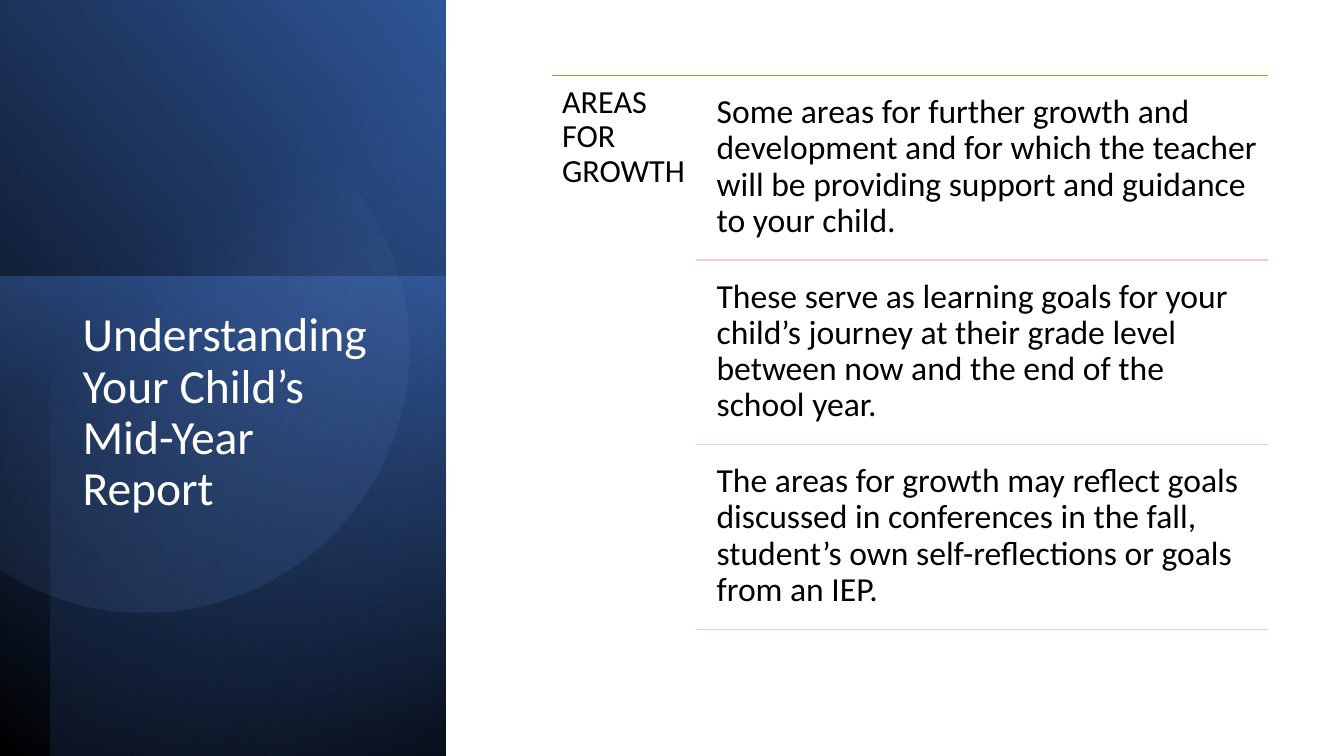
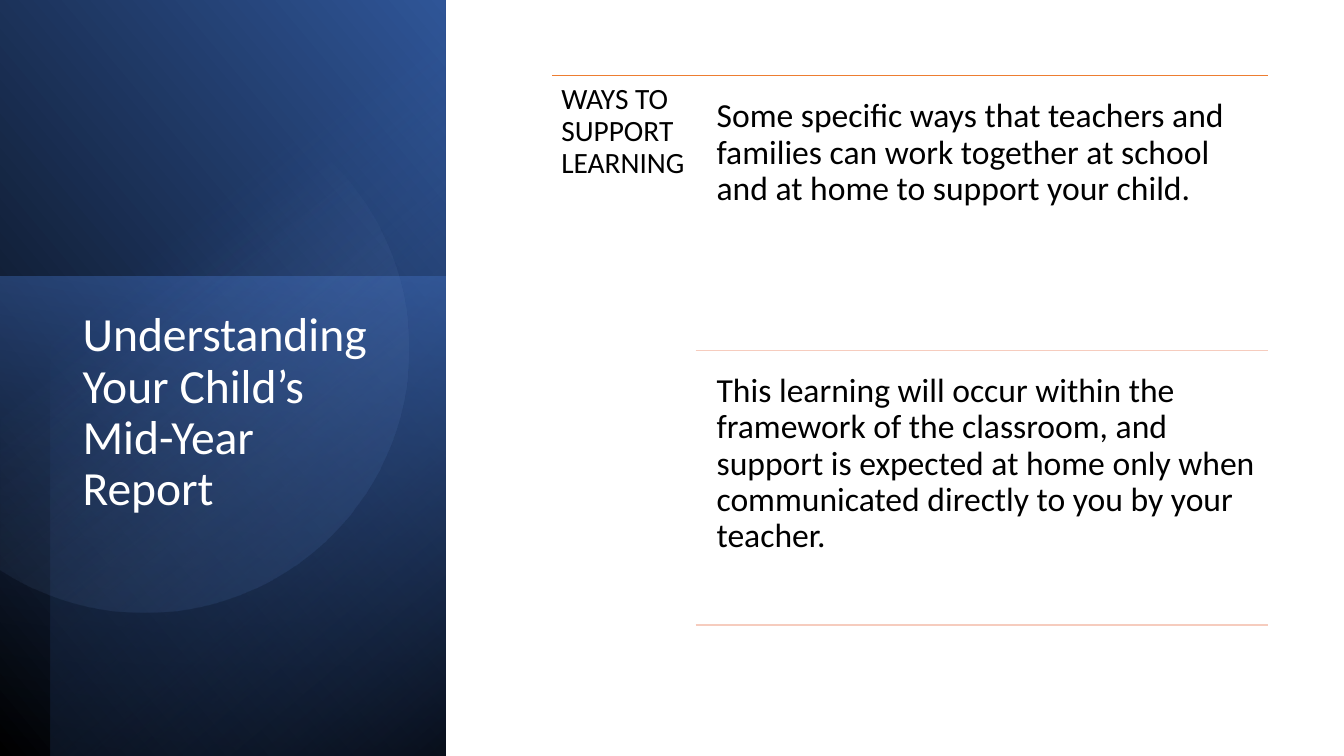
import math
from dataclasses import dataclass

import pptx
import pptx.dml.color
import pptx.enum.shapes
import pptx.enum.text
import pptx.oxml.ns
import pptx.oxml.xmlchemy
import pptx.presentation
import pptx.shapes.autoshape
import pptx.slide
import pptx.text.text
import pptx.util

Pt = pptx.util.Pt
qn = pptx.oxml.ns.qn
make = pptx.oxml.xmlchemy.OxmlElement


@dataclass(frozen=True)
class Theme:
    font: str = "Calibri"
    white: str = "FFFFFF"
    black: str = "000000"
    navy: str = "203864"
    deep: str = "2F5597"
    blue: str = "4472C4"
    pale: str = "8FAADC"
    rule: str = "ED7D31"
    faint: str = "F6CCBE"
    head: int = 34
    body: int = 24


@dataclass(frozen=True)
class Box:
    left: float
    top: float
    width: float
    height: float

    def spans(self) -> tuple[int, int, int, int]:
        return Pt(self.left), Pt(self.top), Pt(self.width), Pt(self.height)


@dataclass(frozen=True)
class Stop:
    place: float
    color: str
    alpha: int = 100


@dataclass(frozen=True)
class Panel:
    box: Box
    turn: int
    flip: bool
    angle: int
    stops: tuple[Stop, Stop]


@dataclass(frozen=True)
class Page:
    label: str
    size: int
    items: tuple[str, ...]


THEME = Theme()
TITLE = "Understanding Your Child’s Mid-Year Report"
TITLE_BOX = Box(51.8, 218.2, 226.8, 241.9)
LIST_BOX = Box(394.6, 54, 511.2, 401.8)
LABEL_WIDTH = 102.24
TEXT_LEFT = 504.7
GAP = 0.05

PANELS = (
    Panel(Box(-111.6, 111.6, 541.4, 318.2), 90, True, 310,
          (Stop(0, THEME.black), Stop(1, THEME.deep))),
    Panel(Box(-12.2, 209.5, 342.7, 318.2), 270, False, 190,
          (Stop(0, THEME.blue, 50), Stop(1, THEME.navy, 0))),
    Panel(Box(-92.9, 128.9, 540, 282.2), 270, True, 220,
          (Stop(0, THEME.black, 59), Stop(0.69, THEME.blue, 0))),
)
DISC_X, DISC_Y, DISC_R = 103, 249, 188.5
DISC_ARC = 123
DISC_ANGLE = 52
DISC_STOPS = (Stop(0.39, THEME.pale, 0), Stop(1, THEME.deep, 26))

PAGES = (
    Page("AREAS FOR GROWTH", 23, (
        "Some areas for further growth and development and for which the teacher "
        "will be providing support and guidance to your child.",
        "These serve as learning goals for your child’s journey at their grade level "
        "between now and the end of the school year.",
        "The areas for growth may reflect goals discussed in conferences in the fall, "
        "student’s own self-reflections or goals from an IEP.",
    )),
    Page("WAYS TO SUPPORT LEARNING", 21, (
        "Some specific ways that teachers and families can work together at school "
        "and at home to support your child.",
        "This learning will occur within the framework of the classroom, and support "
        "is expected at home only when communicated directly to you by your teacher.",
    )),
)


def rgb(color: str) -> pptx.dml.color.RGBColor:
    return pptx.dml.color.RGBColor.from_string(color)


def shade(shape: pptx.shapes.autoshape.Shape, angle: int,
          stops: tuple[Stop, Stop]) -> None:
    shape.shadow.inherit = False
    shape.line.fill.background()
    shape.fill.gradient()
    shape.fill.gradient_angle = 360 - angle
    for mark, stop in zip(shape.fill.gradient_stops, stops):
        mark.position = stop.place
        mark.color.rgb = rgb(stop.color)
    tones = shape.element.spPr.iter(qn("a:srgbClr"))
    for tone, stop in zip(list(tones), stops):
        if stop.alpha < 100:
            alpha = make("a:alpha")
            alpha.set("val", str(stop.alpha * 1000))
            tone.append(alpha)


def add_panel(slide: pptx.slide.Slide, panel: Panel) -> None:
    kind = pptx.enum.shapes.MSO_SHAPE.RECTANGLE
    shape = slide.shapes.add_shape(kind, *panel.box.spans())
    shape.rotation = panel.turn
    if panel.flip:
        shape.element.spPr.xfrm.set("flipH", "1")
    shade(shape, panel.angle, panel.stops)


def add_disc(slide: pptx.slide.Slide) -> None:
    turns = [math.radians(step) for step in range(-DISC_ARC, DISC_ARC + 1, 3)]
    points = [(Pt(max(0, DISC_X + DISC_R * math.cos(turn))),
               Pt(DISC_Y + DISC_R * math.sin(turn))) for turn in turns]
    pen = slide.shapes.build_freeform(*points[0])
    pen.add_line_segments(points[1:], close=True)
    shade(pen.convert_to_shape(), DISC_ANGLE, DISC_STOPS)


def set_text(frame: pptx.text.text.TextFrame, text: str, size: int, color: str) -> None:
    frame.text = text
    frame.word_wrap = True
    frame.auto_size = pptx.enum.text.MSO_AUTO_SIZE.NONE
    frame.vertical_anchor = pptx.enum.text.MSO_ANCHOR.TOP
    for para in frame.paragraphs:
        para.alignment = pptx.enum.text.PP_ALIGN.LEFT
        para.line_spacing = 0.9
        for run in para.runs:
            run.font.name = THEME.font
            run.font.size = Pt(size)
            run.font.color.rgb = rgb(color)


def add_title(slide: pptx.slide.Slide) -> None:
    title = slide.shapes.title
    title.left, title.top, title.width, title.height = TITLE_BOX.spans()
    set_text(title.text_frame, TITLE, THEME.head, THEME.white)
    slide.shapes.element.append(title.element)


def add_text(slide: pptx.slide.Slide, box: Box, text: str, size: int) -> None:
    frame = slide.shapes.add_textbox(*box.spans()).text_frame
    inset = Pt(0.3 * size)
    frame.margin_left = frame.margin_right = inset
    frame.margin_top = frame.margin_bottom = inset
    set_text(frame, text, size, THEME.black)


def add_rule(slide: pptx.slide.Slide, left: float, top: float, color: str) -> None:
    right = LIST_BOX.left + LIST_BOX.width
    kind = pptx.enum.shapes.MSO_CONNECTOR.STRAIGHT
    rule = slide.shapes.add_connector(kind, Pt(left), Pt(top), Pt(right), Pt(top))
    rule.line.color.rgb = rgb(color)
    rule.line.width = Pt(1)
    rule.element.spPr.append(make("a:effectLst"))


def add_list(slide: pptx.slide.Slide, page: Page) -> None:
    left, top = LIST_BOX.left, LIST_BOX.top
    add_rule(slide, left, top, THEME.rule)
    label = Box(left, top, LABEL_WIDTH, LIST_BOX.height)
    add_text(slide, label, page.label, page.size)
    height = LIST_BOX.height / (len(page.items) * (1 + GAP) + GAP)
    width = left + LIST_BOX.width - TEXT_LEFT
    for item in page.items:
        top += GAP * height
        add_text(slide, Box(TEXT_LEFT, top, width, height), item, THEME.body)
        top += height
        add_rule(slide, left + LABEL_WIDTH, top, THEME.faint)


def add_page(deck: pptx.presentation.Presentation, page: Page) -> None:
    slide = deck.slides.add_slide(deck.slide_layouts[5])
    for panel in PANELS:
        add_panel(slide, panel)
    add_disc(slide)
    add_title(slide)
    add_list(slide, page)


def main() -> None:
    deck = pptx.Presentation()
    deck.slide_width, deck.slide_height = Pt(960), Pt(540)
    for page in PAGES:
        add_page(deck, page)
    deck.save("out.pptx")


if __name__ == "__main__":
    main()
